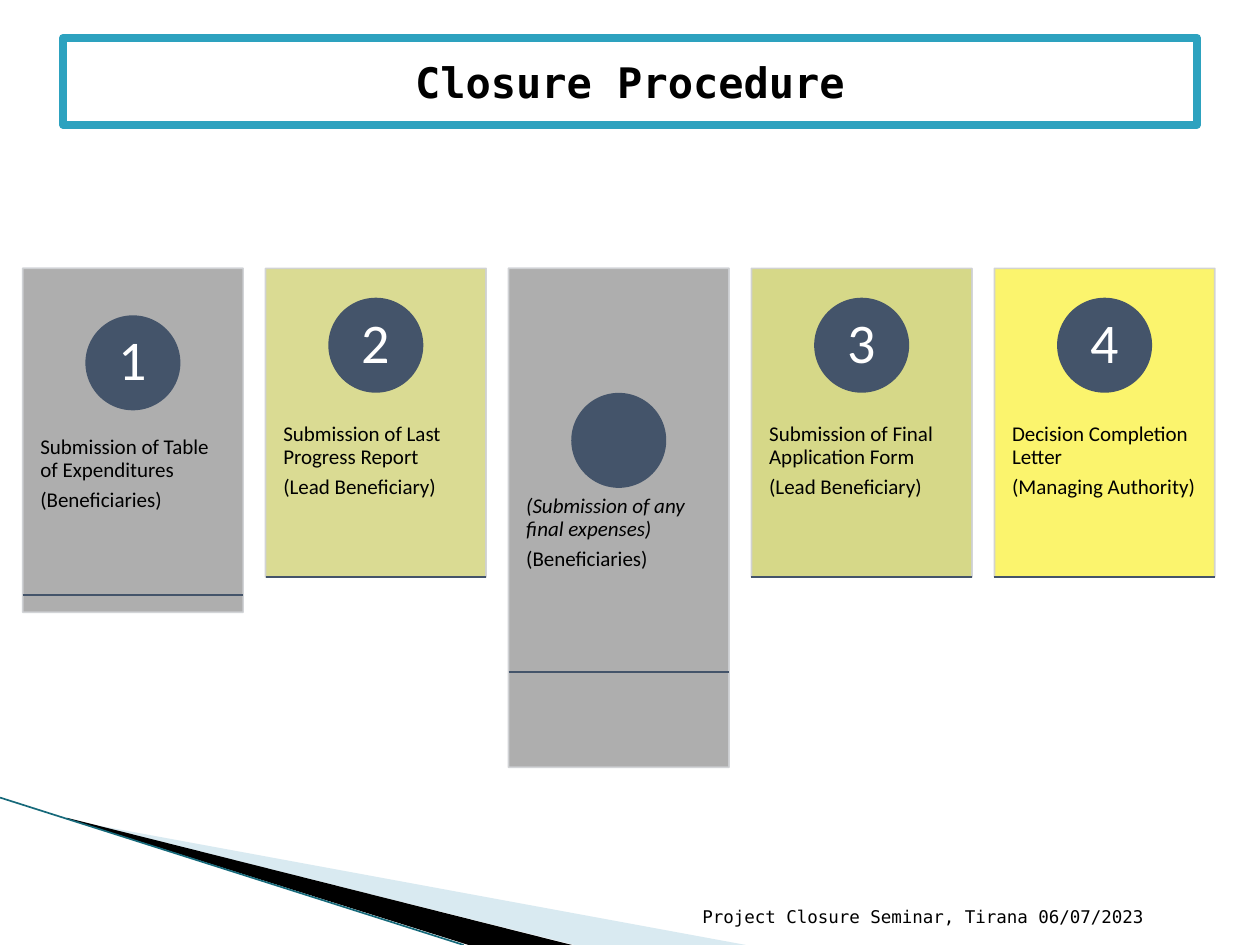
from dataclasses import dataclass

from lxml.etree import SubElement
from pptx import Presentation
from pptx.dml.color import RGBColor as Rgb
from pptx.enum.shapes import MSO_CONNECTOR as Link, MSO_SHAPE as Kind
from pptx.enum.text import MSO_ANCHOR as Anchor, PP_ALIGN as Align
from pptx.oxml.ns import qn
from pptx.util import Inches, Pt


@dataclass(frozen=True)
class Theme:
    white: str = "FFFFFF"
    black: str = "000000"
    teal: str = "2DA2BF"
    edge: str = "16697A"
    pale: str = "A0CBDC"
    navy: str = "44546A"
    frame: str = "CFD1D4"
    gray: str = "A6A6A6"
    olive: str = "D6D888"
    yellow: str = "FBF46D"
    mono: str = "DejaVu Sans Mono"
    sans: str = "Calibri"
    small: int = 10
    body: int = 12
    title: int = 24
    digit: int = 32


COLS, ROWS = 100, 75  # square cells, a tenth of an inch each


class Board:
    def __init__(self, deck, theme):
        self.theme = theme
        self.cell = deck.slide_width / COLS
        self.shapes = deck.slides.add_slide(deck.slide_layouts[6]).shapes

    def span(self, *cells):
        return [round(n * self.cell) for n in cells]

    def fade(self, fill, share):
        """Set the opacity of a solid fill, in percent."""
        tone = fill.fore_color._xFill.find(qn("a:srgbClr"))
        SubElement(tone, qn("a:alpha")).set("val", str(share * 1000))

    def paint(self, shape, fill, line=None, width=1, share=100):
        shape.shadow.inherit = False
        shape.fill.solid()
        shape.fill.fore_color.rgb = Rgb.from_string(fill)
        if share < 100:
            self.fade(shape.fill, share)
        if line:
            shape.line.color.rgb = Rgb.from_string(line)
            shape.line.width = Pt(width)
        else:
            shape.line.fill.background()

    def shape(self, kind, area, fill, line, width=1, share=100):
        item = self.shapes.add_shape(kind, *self.span(*area))
        self.paint(item, fill, line, width, share)
        return item

    def wedge(self, points, fill, share=100):
        first, *rest = [self.span(*p) for p in points]
        shape = self.shapes.build_freeform(*first)
        shape.add_line_segments(rest)
        self.paint(shape.convert_to_shape(), fill, share=share)

    def line(self, start, end, color, width=1):
        item = self.shapes.add_connector(Link.STRAIGHT, *self.span(*start, *end))
        item.line.color.rgb = Rgb.from_string(color)
        item.line.width = Pt(width)
        SubElement(item._element.spPr, qn("a:effectLst"))

    def box(self, area):
        return self.shapes.add_textbox(*self.span(*area))

    def label(self, shape, text, size, font, color, align=Align.LEFT,
              anchor=Anchor.TOP, inset=(0.1, 0.05), bold=False, tight=False):
        frame = shape.text_frame
        frame.word_wrap = True
        frame.vertical_anchor = anchor
        frame.margin_left = frame.margin_right = Inches(inset[0])
        frame.margin_top = frame.margin_bottom = Inches(inset[1])
        frame.text = text
        for para in frame.paragraphs:
            para.alignment = align
            if tight:
                para.line_spacing = 0.9
                para.space_after = Pt(size * 0.35)
            for run in para.runs:
                run.font.size = Pt(size)
                run.font.name = font
                run.font.bold = bold
                run.font.color.rgb = Rgb.from_string(color)
        return frame

    def card(self, left, high, fill, share, digit, step, who):
        """Draw one step; the disc and rule move down with half the extra height."""
        t = self.theme
        top, wide, base, disc = 21.3, 17.5, 24.5, 7.4
        drop = (high - base) / 2
        panel = self.shape(Kind.RECTANGLE, (left, top, wide, high), fill,
                           t.frame, share=share)
        self.fade(panel.line.fill, 90)
        body = self.box((left, top + 0.38 * high, wide, 0.6 * high))
        frame = self.label(body, f"{step}\n{who}", t.body, t.sans, t.black,
                           inset=(0.14, 0.36), tight=True)
        if not digit:
            frame.paragraphs[0].runs[0].font.italic = True
        spot = (left + (wide - disc) / 2, top + 2.4 + drop, disc, disc)
        badge = self.shape(Kind.OVAL, spot, t.navy, t.navy)
        if digit:
            self.label(badge, digit, t.digit, t.sans, t.white, Align.CENTER,
                       Anchor.MIDDLE, (0.06, 0.01), tight=True)
        rule = top + base + drop
        self.line((left, rule), (left + wide, rule), t.navy)


def main():
    deck = Presentation()
    deck.slide_width, deck.slide_height = Inches(10), Inches(7.5)
    t = Theme()
    board = Board(deck, t)

    board.wedge([(5.5, 65.1), (59.2, ROWS), (45.6, ROWS), (5.5, 65)], t.pale, 40)
    board.wedge([(5.3, 64.9), (45.4, ROWS), (37.2, ROWS), (5.4, 65)], t.black)
    board.line((0, 63.3), (36.8, ROWS), t.edge, 0.95)

    foot = board.box((47.9, 70.1, 43.8, 4))
    board.label(foot, "Project Closure Seminar, Tirana 06/07/2023", t.small,
                t.mono, t.black, Align.RIGHT, Anchor.BOTTOM)
    head = board.shape(Kind.RECTANGLE, (5, 3, 90, 6.9), t.white, t.teal, 4.33)
    SubElement(head.line._get_or_add_ln(), qn("a:round"))
    board.label(head, "Closure Procedure", t.title, t.mono, t.black,
                Align.CENTER, Anchor.MIDDLE, bold=True)

    steps = [
        (27.3, t.gray, 90, "1", "Submission of Table of Expenditures",
         "(Beneficiaries)"),
        (24.5, t.olive, 90, "2", "Submission of Last Progress Report",
         "(Lead Beneficiary)"),
        (39.6, t.gray, 90, "", "(Submission of any final expenses)",
         "(Beneficiaries)"),
        (24.5, t.olive, 100, "3", "Submission of Final Application Form",
         "(Lead Beneficiary)"),
        (24.5, t.yellow, 100, "4", "Decision Completion Letter",
         "(Managing Authority)"),
    ]
    for i, step in enumerate(steps):
        board.card(1.8 + 19.28 * i, *step)
    deck.save("out.pptx")


if __name__ == "__main__":
    main()
